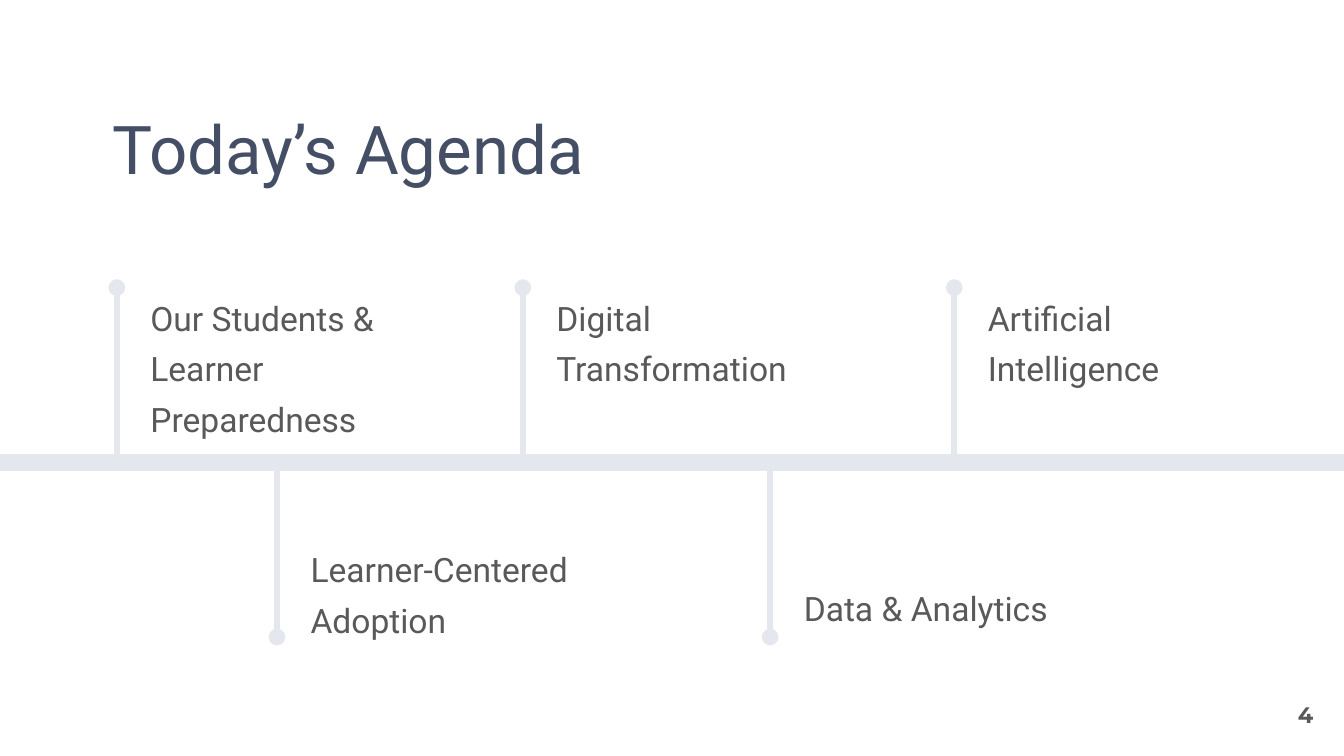
from typing import NamedTuple

from lxml import etree
from pptx import Presentation
from pptx.dml.color import RGBColor
from pptx.enum.shapes import MSO_CONNECTOR
from pptx.enum.text import MSO_ANCHOR, PP_ALIGN
from pptx.oxml.ns import qn
from pptx.util import Pt

STRAIGHT = MSO_CONNECTOR.STRAIGHT
TOP, MIDDLE, BOTTOM = MSO_ANCHOR.TOP, MSO_ANCHOR.MIDDLE, MSO_ANCHOR.BOTTOM
LEFT, RIGHT = PP_ALIGN.LEFT, PP_ALIGN.RIGHT

COLORS = {"title": "444F66", "text": "595959", "line": "E4E7ED", "back": "FFFFFF"}
WIDTH, HEIGHT = 720, 405
AXIS = 247.7
STEM = 93.6
GAP = 18


class Box(NamedTuple):
    left: float
    top: float
    width: float
    height: float


class Style(NamedTuple):
    size: float
    color: str = "text"
    font: str = "Roboto"
    bold: bool = False
    anchor: MSO_ANCHOR = TOP
    align: PP_ALIGN = LEFT
    inset: float = 0
    space: float = 1


class Topic(NamedTuple):
    text: str
    left: float
    top: float
    width: float = 141.1
    above: bool = True


TOPICS = [
    Topic("Our Students & Learner Preparedness", 62.6, 154.1),
    Topic("Learner-Centered Adoption", 148.4, 301, 170.6, False),
    Topic("Digital Transformation", 280.1, 154.1),
    Topic("Data & Analytics", 412.6, 294.5, above=False),
    Topic("Artificial Intelligence", 511.2, 154.1),
]


def add_text(slide, text: str, box: Box, style: Style) -> None:
    frame = slide.shapes.add_textbox(*map(Pt, box)).text_frame
    frame.word_wrap = True
    frame.vertical_anchor = style.anchor
    frame.margin_left = frame.margin_right = Pt(style.inset)
    frame.margin_top = frame.margin_bottom = Pt(style.inset)
    para = frame.paragraphs[0]
    para.text = text
    para.alignment = style.align
    para.line_spacing = style.space
    font = para.font
    font.name, font.size, font.bold = style.font, Pt(style.size), style.bold
    font.color.rgb = RGBColor.from_string(COLORS[style.color])


def add_line(slide, start: tuple[float, float], end: tuple[float, float],
             weight: float, dot: bool = False) -> None:
    line = slide.shapes.add_connector(STRAIGHT, *map(Pt, start + end))
    line.line.color.rgb = RGBColor.from_string(COLORS["line"])
    line.line.width = Pt(weight)
    props = line._element.spPr
    if dot:
        etree.SubElement(props.find(qn("a:ln")), qn("a:tailEnd"), type="oval")
    etree.SubElement(props, qn("a:effectLst"))


def add_topic(slide, topic: Topic) -> None:
    end = AXIS - STEM if topic.above else AXIS + STEM
    style = Style(18, anchor=TOP if topic.above else BOTTOM, space=1.25)
    box = Box(topic.left + GAP, topic.top, topic.width, 41.8)
    add_text(slide, topic.text, box, style)
    add_line(slide, (topic.left, AXIS), (topic.left, end), 3, True)


def main() -> None:
    deck = Presentation()
    deck.slide_width, deck.slide_height = Pt(WIDTH), Pt(HEIGHT)
    slide = deck.slides.add_slide(deck.slide_layouts[6])
    fill = slide.background.fill
    fill.solid()
    fill.fore_color.rgb = RGBColor.from_string(COLORS["back"])

    add_text(slide, "Today’s Agenda", Box(53.3, 50.4, 428.4, 79.9),
             Style(36, "title", inset=7.2))
    add_line(slide, (0, AXIS), (722, AXIS), 9)
    for topic in TOPICS:
        add_topic(slide, topic)
    add_text(slide, "4", Box(667.4, 367.2, 43.2, 31),
             Style(12, font="Montserrat", bold=True, anchor=MIDDLE,
                   align=RIGHT, inset=7.2))
    deck.save("out.pptx")


if __name__ == "__main__":
    main()
